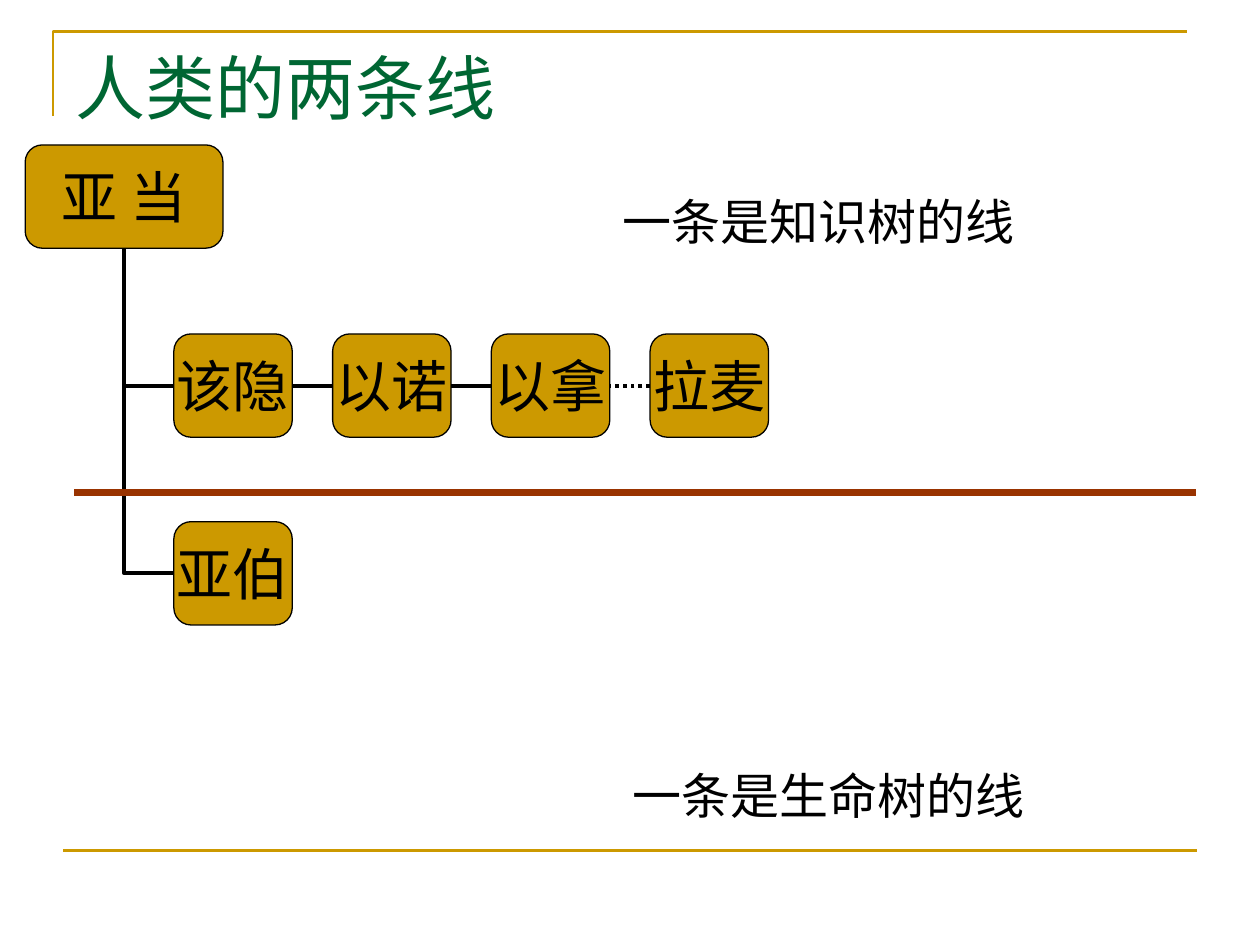
"""Build the slide showing the two lines of mankind as a family tree."""
from lxml import etree
from pptx import Presentation
from pptx import util as u
from pptx.dml.color import RGBColor
from pptx.enum import dml, shapes, text
from pptx.oxml.ns import qn

THEME = {
    "gold": RGBColor.from_string("CC9900"),
    "green": RGBColor.from_string("006633"),
    "brown": RGBColor.from_string("993300"),
    "black": RGBColor.from_string("000000"),
    "title": ("Times New Roman", 40),
    "node": ("Noto Sans CJK SC", 32),
    "caption": ("Arial", 28),
}
TITLE = "人类的两条线"
ROOT = "亚 当"
BRANCHES = [["该隐", "以诺", "以拿", "拉麦"], ["亚伯"]]
CAPTIONS = [("一条是知识树的线", 3.66, 1.47, 5.67), ("一条是生命树的线", 3.66, 6.03, 5.83)]
FRAME = [(0.42, 0.92), (0.42, 0.25), (9.42, 0.25)]
RULES = [((0.5, 6.75), (9.5, 6.75), "gold", 1.5), ((0.59, 3.91), (9.49, 3.91), "brown", 4)]
ROOT_BOX = (0.2, 1.15, 1.57, 0.82)
NODE_LEFT, NODE_TOP, NODE_WIDTH, NODE_HEIGHT = 1.38, 2.65, 0.94, 0.82
STEP_X, STEP_Y = 1.26, 1.49


def write(frame, words, style, color, align):
    frame.text = words
    para = frame.paragraphs[0]
    para.alignment = align
    span = para.runs[0]
    span.font.name, size = THEME[style]
    span.font.size = u.Pt(size)
    span.font.color.rgb = THEME[color]


def set_line(line, color, width):
    line.color.rgb = THEME[color]
    line.width = u.Pt(width)


def add_node(slide, words, left, top, width, height):
    box = slide.shapes.add_shape(
        shapes.MSO_SHAPE.ROUNDED_RECTANGLE, *map(u.Inches, (left, top, width, height)))
    box.shadow.inherit = False
    box.fill.solid()
    box.fill.fore_color.rgb = THEME["gold"]
    set_line(box.line, "black", 0.75)
    frame = box.text_frame
    frame.margin_left = frame.margin_right = frame.margin_top = frame.margin_bottom = 0
    frame.word_wrap = False
    frame.vertical_anchor = text.MSO_ANCHOR.MIDDLE
    write(frame, words, "node", "black", text.PP_ALIGN.CENTER)
    return box


def add_line(slide, start, end, color, width, kind=shapes.MSO_CONNECTOR.STRAIGHT):
    line = slide.shapes.add_connector(kind, *map(u.Inches, (*start, *end)))
    etree.SubElement(line._element.spPr, qn("a:effectLst"))
    set_line(line.line, color, width)
    return line


def link(slide, child, parent, parent_site, kind=shapes.MSO_CONNECTOR.STRAIGHT):
    line = add_line(slide, (0, 0), (1, 1), "black", 2.25, kind)
    line.begin_connect(child, 1)
    line.end_connect(parent, parent_site)
    return line


def add_tree(slide):
    root = add_node(slide, ROOT, *ROOT_BOX)
    for row, names in enumerate(BRANCHES):
        top = NODE_TOP + row * STEP_Y
        previous = None
        for column, name in enumerate(names):
            left = NODE_LEFT + column * STEP_X
            node = add_node(slide, name, left, top, NODE_WIDTH, NODE_HEIGHT)
            if previous is None:
                elbow = link(slide, node, root, 2, shapes.MSO_CONNECTOR.ELBOW)
                elbow._element.spPr.find(qn("a:prstGeom")).set("prst", "bentConnector2")
            else:
                line = link(slide, node, previous, 3)
                if column == 3:
                    line.line.dash_style = dml.MSO_LINE.ROUND_DOT
            previous = node


def add_frame(slide):
    first, *rest = [tuple(map(u.Inches, point)) for point in FRAME]
    builder = slide.shapes.build_freeform(*first, scale=1.0)
    builder.add_line_segments(rest, close=False)
    corner = builder.convert_to_shape()
    corner.shadow.inherit = False
    corner.fill.background()
    set_line(corner.line, "gold", 1.5)


def main():
    deck = Presentation()
    deck.slide_width, deck.slide_height = u.Inches(10), u.Inches(7.5)
    slide = deck.slides.add_slide(deck.slide_layouts[5])

    title = slide.shapes.title
    title.left, title.top, title.width, title.height = map(u.Inches, (0.5, 0.3, 9, 0.93))
    title.text_frame.auto_size = text.MSO_AUTO_SIZE.NONE
    title.text_frame.vertical_anchor = text.MSO_ANCHOR.TOP
    write(title.text_frame, TITLE, "title", "green", text.PP_ALIGN.LEFT)

    add_frame(slide)
    add_tree(slide)
    for start, end, color, width in RULES:
        add_line(slide, start, end, color, width)
    for words, left, top, width in CAPTIONS:
        box = slide.shapes.add_textbox(*map(u.Inches, (left, top, width, 0.57)))
        box.text_frame.word_wrap = True
        write(box.text_frame, words, "caption", "black", text.PP_ALIGN.CENTER)

    deck.save("out.pptx")


if __name__ == "__main__":
    main()
